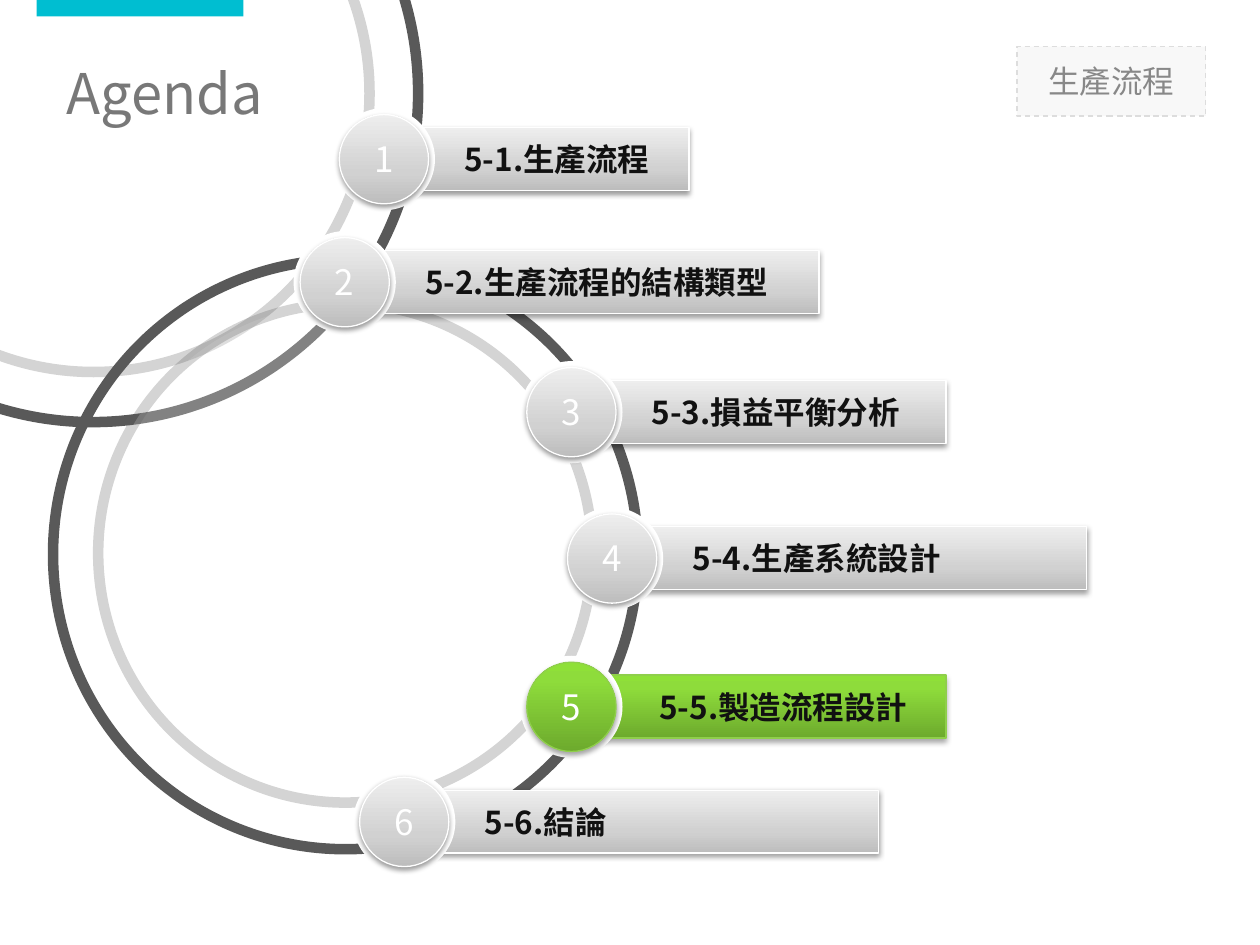
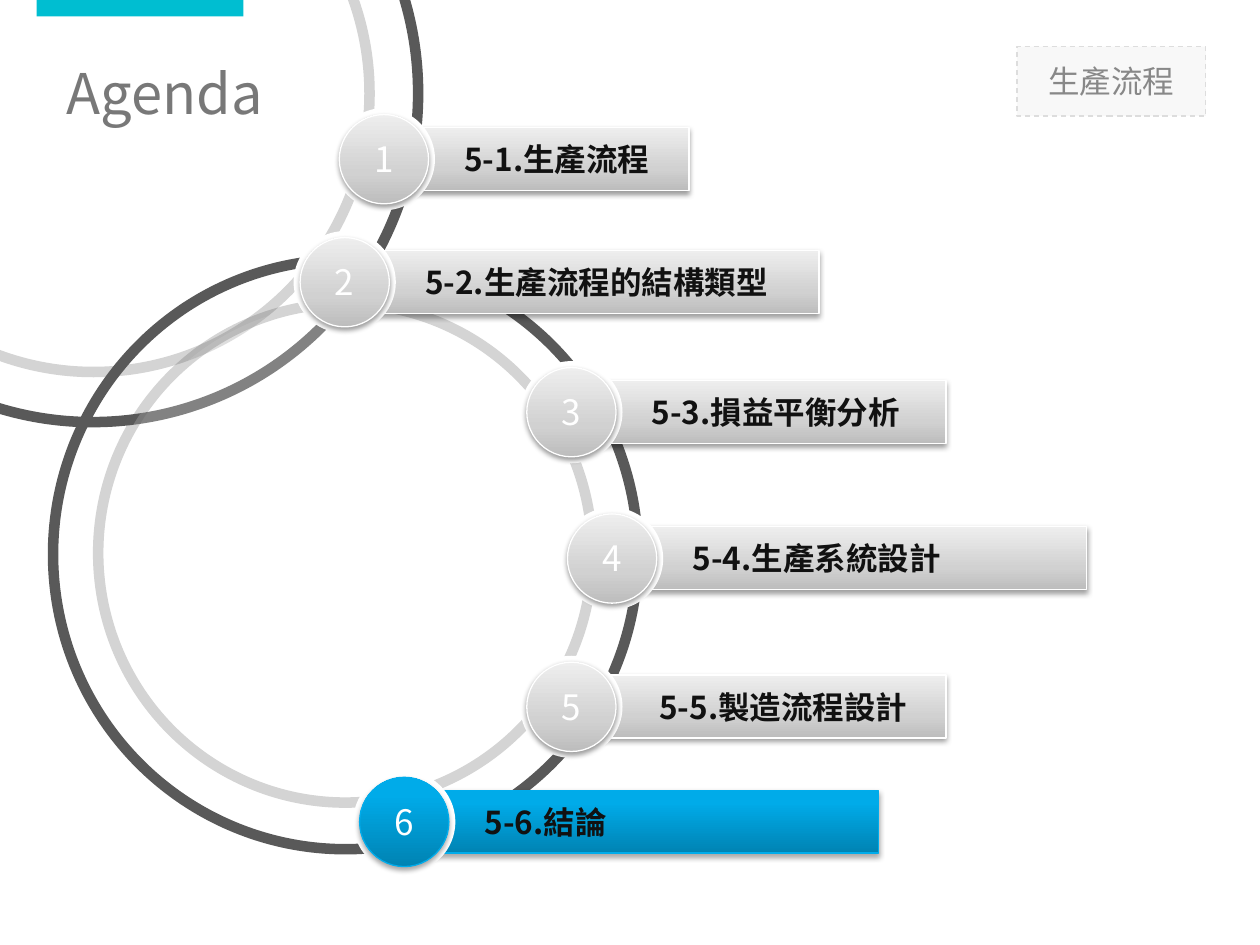
from lxml import etree
from pptx import Presentation
from pptx import util as u
from pptx.dml.color import RGBColor
from pptx.enum import dml, shapes, text
from pptx.oxml import ns

FONT = "Noto Sans CJK SC"
INK = RGBColor(0x11, 0x11, 0x11)
WHITE = RGBColor(0xFF, 0xFF, 0xFF)
RING = RGBColor(0x59, 0x59, 0x59)
ACCENT = RGBColor(0x00, 0xBE, 0xD1)
TAG_FILL = RGBColor(0xF8, 0xF8, 0xF8)
TAG_LINE = RGBColor(0xDD, 0xDD, 0xDD)
TAG_TEXT = RGBColor(0x88, 0x88, 0x88)
GREEN_LINE = RGBColor(0x8F, 0xCF, 0x4B)
BLUE_LINE = RGBColor(0x00, 0xAC, 0xEB)

GREY_STYLE = (((0, "BDBDBD"), (35, "D1D1D1"), (100, "EEEEEE")), WHITE, 38, 1.6)
GREEN_STYLE = (((0, "6DAA2D"), (80, "8EDC3B"), (100, "8FE038")), GREEN_LINE, 35, 1.8)
BLUE_STYLE = (((0, "0083B3"), (80, "00ABE9"), (100, "00ABEA")), BLUE_LINE, 35, 1.8)

RECT = shapes.MSO_SHAPE.RECTANGLE
OVAL = shapes.MSO_SHAPE.OVAL
CENTER = text.PP_ALIGN.CENTER
BAR_HEIGHT = 1.27
BADGE = 2.06
BADGE_RIM = 0.13

RING_PAIRS = (
    ((-4.7, -4.75, 13.13, 13.26), (-3.68, -3.73, 11.13, 11.23)),
    ((1.07, 5.23, 11.79, 11.89), (1.98, 6.12, 9.96, 10.06)),
)

# left, top, bar width, label width, label indent, topic
TOPICS = (
    (7.9, 2.57, 5.99, 5.31, 0.25, "5-1.生產流程"),
    (7.11, 5.05, 9.4, 7.75, 0.25, "5-2.生產流程的結構類型"),
    (11.68, 7.67, 7.39, 6.78, 0.25, "5-3.損益平衡分析"),
    (12.5, 10.62, 9.4, 7.75, 0.25, "5-4.生產系統設計"),
    (11.68, 13.61, 7.39, 6.78, 0.4, "5-5.製造流程設計"),
    (8.31, 15.93, 9.4, 7.75, 0.25, "5-6.結論"),
)


def add_child(parent, tag, **attributes):
    return etree.SubElement(parent, ns.qn(tag), attributes)


def set_opacity(element, percent):
    for color in element.iter(ns.qn("a:srgbClr")):
        add_child(color, "a:alpha", val=str(percent * 1000))


def write(frame, words, size, color, bold=False, align=None, opacity=100):
    frame.word_wrap = True
    paragraph = frame.paragraphs[0]
    paragraph.text = words
    paragraph.alignment = align
    font = paragraph.font
    font.size, font.bold, font.name = u.Pt(size), bold, FONT
    font.color.rgb = color
    properties = paragraph._p.pPr.find(ns.qn("a:defRPr"))
    add_child(properties, "a:ea", typeface=FONT)
    if opacity < 100:
        set_opacity(properties, opacity)


def add_label(slide, box, words, size, color, indent=0.25, **style):
    frame = slide.shapes.add_textbox(*map(u.Cm, box)).text_frame
    frame.margin_left = u.Cm(indent)
    write(frame, words, size, color, **style)
    return frame


def add_plain(parent, kind, box, fill=None, line=None, width=0.75):
    plain = parent.shapes.add_shape(kind, *map(u.Cm, box))
    plain.shadow.inherit = False
    if fill is None:
        plain.fill.background()
    else:
        plain.fill.solid()
        plain.fill.fore_color.rgb = fill
    if line is None:
        plain.line.fill.background()
    else:
        plain.line.color.rgb = line
        plain.line.width = u.Pt(width)
    return plain


def add_glossy(slide, kind, box, style):
    stops, line, shade, distance = style
    glossy = add_plain(slide, kind, box, line=line)
    glossy.fill.gradient()
    glossy.fill.gradient_angle = 90
    properties = glossy._element.spPr
    stop_list = properties.find(".//" + ns.qn("a:gsLst"))
    stop_list.clear()
    for position, color in stops:
        stop = add_child(stop_list, "a:gs", pos=str(position * 1000))
        add_child(stop, "a:srgbClr", val=color)
    shadow = add_child(
        properties.find(ns.qn("a:effectLst")), "a:outerShdw",
        blurRad=str(u.Pt(3.1)), dist=str(u.Pt(distance)),
        dir="5400000", rotWithShape="0")
    add_child(shadow, "a:srgbClr", val="000000")
    set_opacity(shadow, shade)


def add_ring_pair(slide, outer, inner):
    pair = slide.shapes.add_group_shape()
    add_plain(pair, OVAL, outer, line=RING, width=6)
    veil = add_plain(pair, OVAL, inner, WHITE, RING, 6)
    set_opacity(veil._element.spPr, 25)


def add_topic(slide, number, topic, style):
    left, top, width, label_width, indent, words = topic
    badge_left, badge_top = left - 1.19, top - 0.39
    disc = BADGE - 2 * BADGE_RIM
    add_glossy(slide, RECT, (left, top, width, BAR_HEIGHT), style)
    add_plain(slide, OVAL, (badge_left, badge_top, BADGE, BADGE), WHITE)
    add_glossy(slide, OVAL, (badge_left + BADGE_RIM, badge_top + BADGE_RIM, disc, disc), style)
    add_label(slide, (left + 1.21, top + 0.13, label_width, 1.02), words, 18, INK,
              indent, bold=True)
    add_label(slide, (badge_left, top + 0.08, BADGE, 1.12), str(number), 20, WHITE,
              align=CENTER)


def add_header(slide):
    tag = add_plain(slide, RECT, (20.5, 0.94, 3.81, 1.4), TAG_FILL, TAG_LINE)
    tag.line.dash_style = dml.MSO_LINE.DASH
    tag.text_frame.vertical_anchor = text.MSO_ANCHOR.MIDDLE
    write(tag.text_frame, "生產流程", 18, TAG_TEXT, align=CENTER)
    title = add_label(slide, (1.09, 0.86, 17.27, 2.01), "Agenda", 32, INK, opacity=75)
    title.vertical_anchor = text.MSO_ANCHOR.MIDDLE


def add_agenda(deck, current, highlight):
    slide = deck.slides.add_slide(deck.slide_layouts[6])
    add_header(slide)
    for outer, inner in RING_PAIRS:
        add_ring_pair(slide, outer, inner)
    add_plain(slide, RECT, (0.74, 0, 4.17, 0.33), ACCENT)
    for number, topic in enumerate(TOPICS, 1):
        add_topic(slide, number, topic, highlight if number == current else GREY_STYLE)


def main():
    deck = Presentation()
    deck.slide_width, deck.slide_height = u.Cm(25.4), u.Cm(19.05)
    add_agenda(deck, 5, GREEN_STYLE)
    add_agenda(deck, 6, BLUE_STYLE)
    deck.save("out.pptx")


if __name__ == "__main__":
    main()
